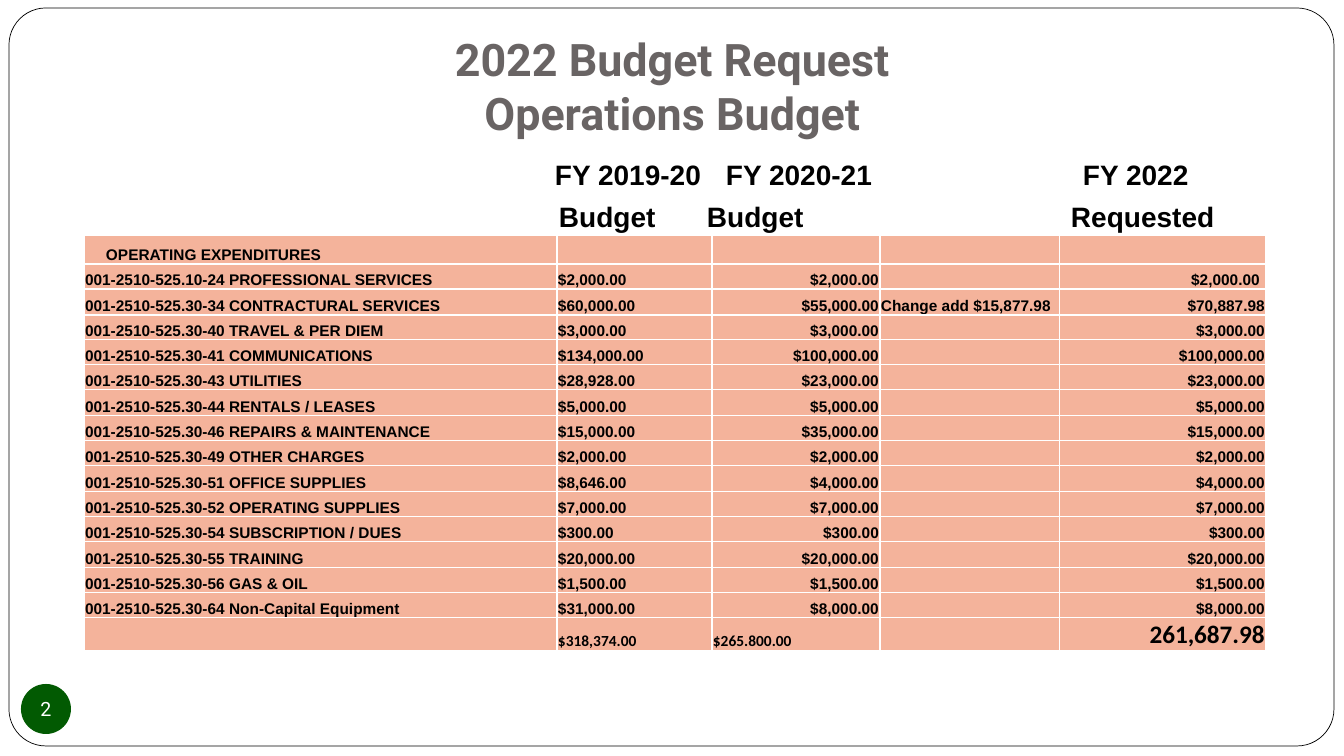
from dataclasses import dataclass

from lxml.etree import SubElement
from pptx import Presentation
from pptx.dml.color import RGBColor
from pptx.enum.shapes import MSO_SHAPE as Preset
from pptx.enum.text import MSO_ANCHOR as Anchor, MSO_AUTO_SIZE as AutoSize, PP_ALIGN as Align
from pptx.oxml.ns import qn
from pptx.util import Emu, Pt


@dataclass(frozen=True)
class Theme:
    white: str = "FFFFFF"
    black: str = "000000"
    title_gray: str = "696464"
    badge_green: str = "025A02"
    cell_salmon: str = "F4B39B"
    display_font: str = "Roboto"
    text_font: str = "Arial"
    total_font: str = "Calibri"
    title_size: int = 32
    heading_size: int = 20
    total_size: int = 18
    badge_size: int = 14
    cell_size: int = 11


THEME = Theme()
EMU_PER_PX = 12192000 / 1344

# Column headings: left edge and width in px, then each line with its indent
HEADINGS = [
    (555, 152, [("FY 2019-20", 0), ("Budget", 4)]),
    (707, 172, [("FY 2020-21", 19), ("Budget", 0)]),
    (1071, 195, [("FY 2022", 12), ("Requested", 0)]),
]
COLUMN_WIDTHS = [473, 155, 168, 180, 206]
COLUMN_ALIGNS = [Align.LEFT, Align.LEFT, Align.RIGHT, Align.LEFT, Align.RIGHT]
SECTION_HEIGHT, ITEM_HEIGHT, TOTAL_HEIGHT = 29, 25.3, 33

SECTION_ROW = ("OPERATING EXPENDITURES", "", "", "", "")
ITEM_ROWS = [
    ("001-2510-525.10-24 PROFESSIONAL SERVICES", "$2,000.00", "$2,000.00", "", "$2,000.00"),
    ("001-2510-525.30-34 CONTRACTURAL SERVICES", "$60,000.00", "$55,000.00",
     "Change add $15,877.98", "$70,887.98"),
    ("001-2510-525.30-40 TRAVEL & PER DIEM", "$3,000.00", "$3,000.00", "", "$3,000.00"),
    ("001-2510-525.30-41 COMMUNICATIONS", "$134,000.00", "$100,000.00", "", "$100,000.00"),
    ("001-2510-525.30-43 UTILITIES", "$28,928.00", "$23,000.00", "", "$23,000.00"),
    ("001-2510-525.30-44 RENTALS / LEASES", "$5,000.00", "$5,000.00", "", "$5,000.00"),
    ("001-2510-525.30-46 REPAIRS & MAINTENANCE", "$15,000.00", "$35,000.00", "", "$15,000.00"),
    ("001-2510-525.30-49 OTHER CHARGES", "$2,000.00", "$2,000.00", "", "$2,000.00"),
    ("001-2510-525.30-51 OFFICE SUPPLIES", "$8,646.00", "$4,000.00", "", "$4,000.00"),
    ("001-2510-525.30-52 OPERATING SUPPLIES", "$7,000.00", "$7,000.00", "", "$7,000.00"),
    ("001-2510-525.30-54 SUBSCRIPTION / DUES", "$300.00", "$300.00", "", "$300.00"),
    ("001-2510-525.30-55 TRAINING", "$20,000.00", "$20,000.00", "", "$20,000.00"),
    ("001-2510-525.30-56 GAS & OIL", "$1,500.00", "$1,500.00", "", "$1,500.00"),
    ("001-2510-525.30-64 Non-Capital Equipment", "$31,000.00", "$8,000.00", "", "$8,000.00"),
]
TOTAL_ROW = ("", "$318,374.00", "$265.800.00", "", "261,687.98")


def px(length):
    return Emu(round(length * EMU_PER_PX))


def set_margins(target, left, top, right, bottom):
    target.margin_left, target.margin_top = px(left), px(top)
    target.margin_right, target.margin_bottom = px(right), px(bottom)


def add_run(paragraph, text, size, font, color, bold=True):
    run = paragraph.add_run()
    run.text = text
    run.font.size, run.font.name, run.font.bold = Pt(size), font, bold
    run.font.color.rgb = RGBColor.from_string(color)


def add_preset(slide, preset, box, fill):
    shape = slide.shapes.add_shape(preset, *map(px, box))
    shape.shadow.inherit = False
    shape.fill.solid()
    shape.fill.fore_color.rgb = RGBColor.from_string(fill)
    return shape


def add_frame(slide, box):
    frame = add_preset(slide, Preset.ROUNDED_RECTANGLE, box, THEME.white)
    frame.adjustments[0] = 0.05
    frame.line.color.rgb = RGBColor.from_string(THEME.black)
    frame.line.width = Pt(0.5)
    # Send behind the title
    frame.element.getparent().insert(2, frame.element)


def fill_title(title, box):
    title.left, title.top, title.width, title.height = map(px, box)
    text_frame = title.text_frame
    text_frame.auto_size, text_frame.vertical_anchor = AutoSize.NONE, Anchor.TOP
    set_margins(text_frame, 10, 5, 10, 0)
    paragraph = text_frame.paragraphs[0]
    paragraph.alignment = Align.CENTER
    style = (THEME.title_size, THEME.display_font, THEME.title_gray)
    add_run(paragraph, "2022 Budget Request", *style)
    paragraph.add_line_break()
    add_run(paragraph, "Operations Budget", *style)


def add_headings(slide, top, height):
    for left, width, lines in HEADINGS:
        text_box = slide.shapes.add_textbox(*map(px, (left, top, width, height)))
        text_frame = text_box.text_frame
        text_frame.word_wrap = True
        set_margins(text_frame, 0, 0, 0, 0)
        for index, (text, indent) in enumerate(lines):
            paragraph = text_frame.add_paragraph() if index else text_frame.paragraphs[0]
            paragraph.space_before = Pt(6 if index else 0)
            paragraph._p.get_or_add_pPr().set("marL", str(px(indent)))
            add_run(paragraph, text, THEME.heading_size, THEME.text_font, THEME.black)


def add_borders(cell):
    properties = cell._tc.get_or_add_tcPr()
    for position, side in enumerate(("lnL", "lnR", "lnT", "lnB")):
        line = SubElement(properties, qn(f"a:{side}"), w=str(Pt(1)))
        fill = SubElement(line, qn("a:solidFill"))
        SubElement(fill, qn("a:srgbClr"), val=THEME.white)
        properties.insert(position, line)


def fill_cell(cell, text, align, size, font, indent=1, right=1):
    cell.fill.solid()
    cell.fill.fore_color.rgb = RGBColor.from_string(THEME.cell_salmon)
    add_borders(cell)
    cell.vertical_anchor = Anchor.BOTTOM
    set_margins(cell, indent, 1, right, 0)
    paragraph = cell.text_frame.paragraphs[0]
    paragraph.alignment = align
    if text:
        add_run(paragraph, text, size, font, THEME.black)
    else:
        # Keeps an empty cell from stretching its row
        SubElement(paragraph._p, qn("a:endParaRPr"), sz=str(size * 100))


def add_budget_table(slide, left, top):
    rows = [SECTION_ROW, *ITEM_ROWS, TOTAL_ROW]
    edges = [round(ITEM_HEIGHT * i) for i in range(len(ITEM_ROWS) + 1)]
    heights = [SECTION_HEIGHT, *(b - a for a, b in zip(edges, edges[1:])), TOTAL_HEIGHT]
    box = (left, top, sum(COLUMN_WIDTHS), sum(heights))
    table = slide.shapes.add_table(len(rows), len(COLUMN_WIDTHS), *map(px, box)).table
    table.first_row = table.horz_banding = False
    for column, width in zip(table.columns, COLUMN_WIDTHS):
        column.width = px(width)
    for row, height in zip(table.rows, heights):
        row.height = px(height)
    last_row, last_column = len(rows) - 1, len(COLUMN_WIDTHS) - 1
    for r, values in enumerate(rows):
        for c, text in enumerate(values):
            is_total = r == last_row
            align = Align.LEFT if is_total and c < last_column else COLUMN_ALIGNS[c]
            size = THEME.total_size if is_total and c == last_column else THEME.cell_size
            font = THEME.total_font if is_total else THEME.text_font
            indent = 22 if (r, c) == (0, 0) else 1
            right = 6 if (r, c) == (1, last_column) else 1
            fill_cell(table.cell(r, c), text, align, size, font, indent, right)


def add_page_badge(slide, box):
    badge = add_preset(slide, Preset.OVAL, box, THEME.badge_green)
    badge.line.fill.background()
    text_frame = badge.text_frame
    text_frame.word_wrap, text_frame.vertical_anchor = False, Anchor.MIDDLE
    set_margins(text_frame, 0, 0, 0, 0)
    paragraph = text_frame.paragraphs[0]
    paragraph.alignment = Align.CENTER
    add_run(paragraph, "2", THEME.badge_size, THEME.display_font, THEME.white, bold=False)


def main():
    presentation = Presentation()
    presentation.slide_width, presentation.slide_height = px(1344), px(756)
    # Title Only layout
    slide = presentation.slides.add_slide(presentation.slide_layouts[5])
    add_frame(slide, (9, 8, 1325, 738))
    fill_title(slide.shapes.title, (219, 27, 907, 111))
    add_headings(slide, 157, 76)
    add_budget_table(slide, 84, 235)
    add_page_badge(slide, (21, 684, 50, 50))
    presentation.save("out.pptx")


if __name__ == "__main__":
    main()
